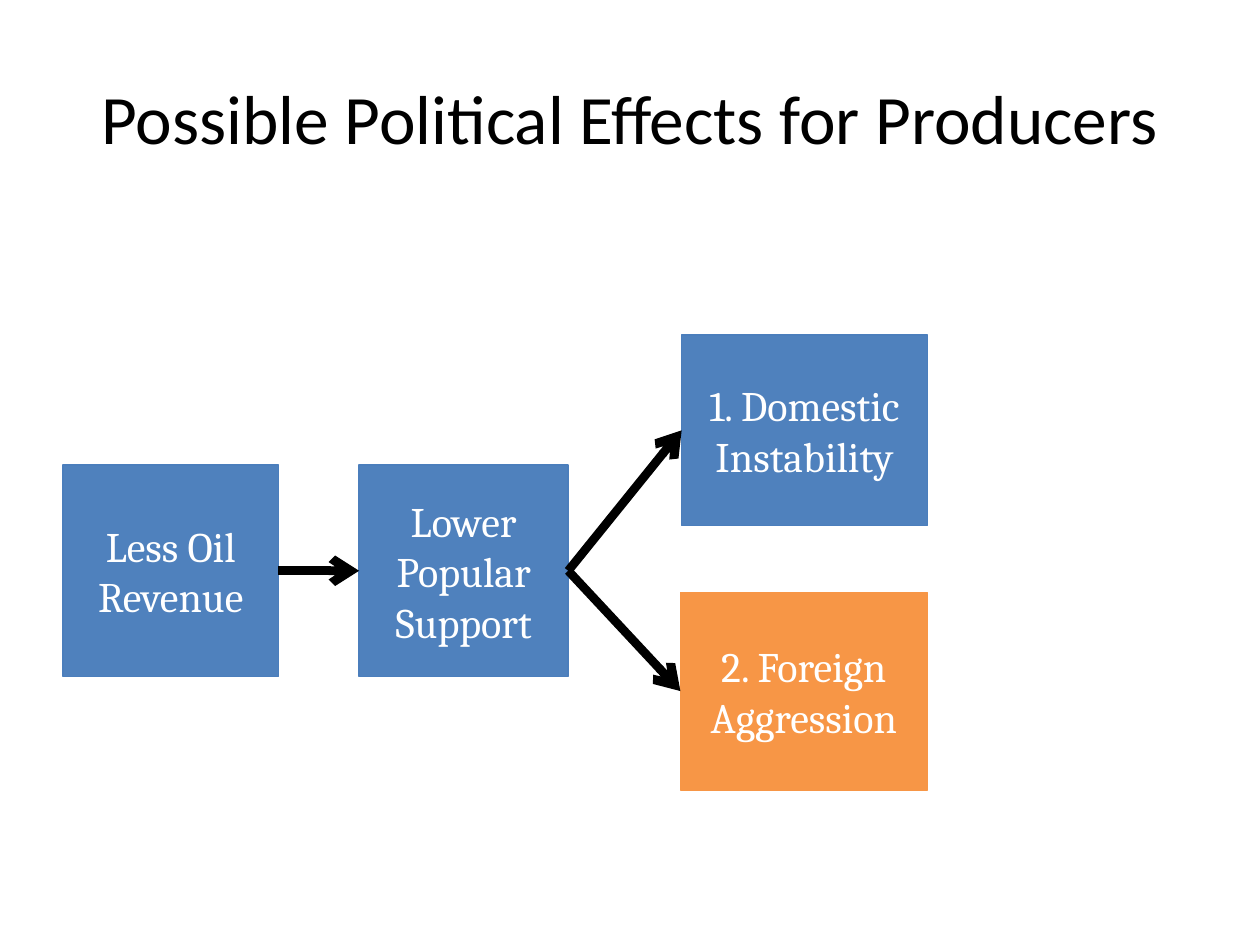
from dataclasses import dataclass

from lxml import etree
from pptx import Presentation
from pptx.dml.color import RGBColor
from pptx.enum.shapes import MSO_CONNECTOR, MSO_SHAPE
from pptx.enum.text import MSO_ANCHOR, PP_ALIGN
from pptx.oxml.ns import qn
from pptx.util import Inches, Pt

RECTANGLE = MSO_SHAPE.RECTANGLE
STRAIGHT = MSO_CONNECTOR.STRAIGHT
MIDDLE = MSO_ANCHOR.MIDDLE
CENTER = PP_ALIGN.CENTER
LEFT_SIDE, RIGHT_SIDE = 1, 3


@dataclass(frozen=True)
class Theme:
    """Colours, fonts and sizes of the slide."""
    ink: str = "000000"
    paper: str = "FFFFFF"
    blue: str = "4F81BD"
    blue_edge: str = "4B7EBC"
    orange: str = "F79646"
    title_font: str = "Calibri"
    step_font: str = "Cambria"
    title_size: float = 39.6
    step_size: float = 24
    edge_width: float = 0.75
    arrow_width: float = 5


THEME = Theme()


def write(frame, text, *, font, size, color):
    """Put centred, formatted text into a text frame."""
    frame.word_wrap = True
    frame.vertical_anchor = MIDDLE
    paragraph = frame.paragraphs[0]
    paragraph.alignment = CENTER
    run = paragraph.add_run()
    run.text = text
    run.font.name = font
    run.font.size = Pt(size)
    run.font.color.rgb = RGBColor.from_string(color)


def add_title(slide, box, text):
    """Place the heading in its box."""
    title = slide.shapes.add_textbox(*map(Inches, box))
    write(title.text_frame, text, font=THEME.title_font,
          size=THEME.title_size, color=THEME.ink)


def add_step(slide, box, text, fill, edge):
    """Place one step of the causal chain and return it."""
    step = slide.shapes.add_shape(RECTANGLE, *map(Inches, box))
    step.shadow.inherit = False
    step.fill.solid()
    step.fill.fore_color.rgb = RGBColor.from_string(fill)
    step.line.color.rgb = RGBColor.from_string(edge)
    step.line.width = Pt(THEME.edge_width)
    write(step.text_frame, text, font=THEME.step_font,
          size=THEME.step_size, color=THEME.paper)
    return step


def add_arrow(slide, cause, effect):
    """Join the right side of a cause to the left side of its effect."""
    arrow = slide.shapes.add_connector(STRAIGHT, 0, 0, 0, 0)
    arrow.begin_connect(cause, RIGHT_SIDE)
    arrow.end_connect(effect, LEFT_SIDE)
    arrow.line.color.rgb = RGBColor.from_string(THEME.ink)
    arrow.line.width = Pt(THEME.arrow_width)
    etree.SubElement(arrow.line._get_or_add_ln(), qn("a:tailEnd"), type="arrow")
    etree.SubElement(arrow._element.spPr, qn("a:effectLst"))


def add_causal_chain(slide, box):
    """Draw the chain from lost revenue to its two outcomes inside a box."""
    left, top, width, height = box
    right, bottom = left + width, top + height
    chain_top, chain_height = top + 1.03, 1.68
    blue = (THEME.blue, THEME.blue_edge)
    orange = (THEME.orange, THEME.orange)

    revenue = add_step(slide, (left, chain_top, 1.71, chain_height),
                       "Less Oil Revenue", *blue)
    support = add_step(slide, (left + 2.35, chain_top, 1.66, chain_height),
                       "Lower Popular Support", *blue)
    instability = add_step(slide, (right - 1.95, top, 1.95, 1.51),
                           "1. Domestic Instability", *blue)
    aggression = add_step(slide, (right - 1.96, bottom - 1.57, 1.96, 1.57),
                          "2. Foreign Aggression", *orange)

    add_arrow(slide, revenue, support)
    for outcome in (instability, aggression):
        add_arrow(slide, support, outcome)


def main():
    """Build and save the slide."""
    deck = Presentation()
    deck.slide_width, deck.slide_height = Inches(10), Inches(7.5)
    slide = deck.slides.add_slide(deck.slide_layouts[6])
    add_title(slide, (0.5, 0.3, 9, 1.25), "Possible Political Effects for Producers")
    add_causal_chain(slide, (0.5, 2.66, 6.86, 3.61))
    deck.save("out.pptx")


if __name__ == "__main__":
    main()
